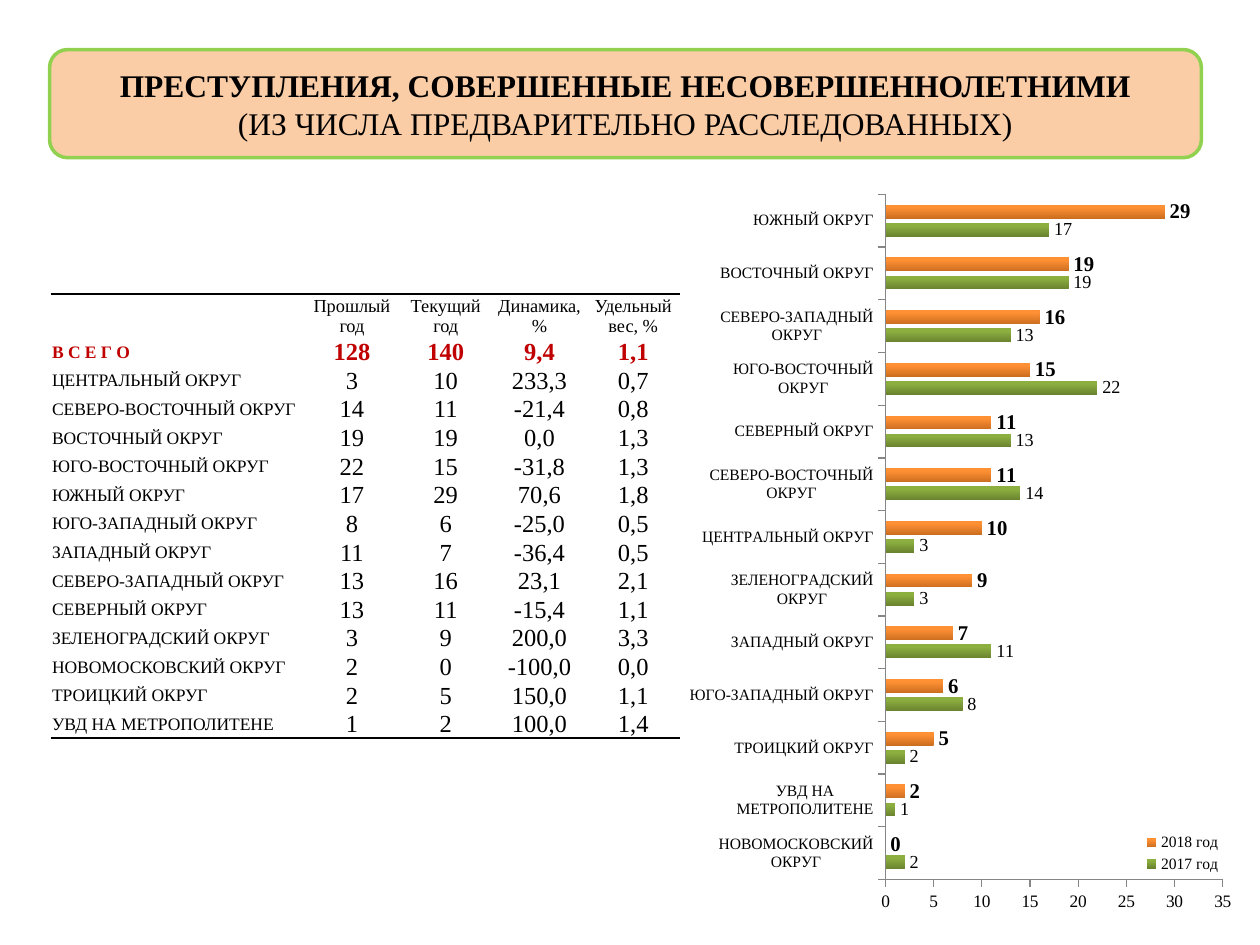
"""Builds a slide on juvenile crime by district: title, table and bar chart."""
import pptx
import pptx.chart.data
import pptx.dml.color
import pptx.enum.chart
import pptx.enum.shapes
import pptx.enum.text
import pptx.oxml.ns
import pptx.util
from lxml import etree

Cm, Pt = pptx.util.Cm, pptx.util.Pt
qn = pptx.oxml.ns.qn
ALIGN = pptx.enum.text.PP_ALIGN
MIDDLE = pptx.enum.text.MSO_ANCHOR.MIDDLE

HEX = {
    "ink": "000000", "paper": "FFFFFF", "total": "C00000", "axis": "868686",
    "peach": "FBCDA7", "lime": "92D050",
    "green": ("6A832F", "8CAF40"), "orange": ("CC6E20", "FF9034"),
}
TITLE = ["ПРЕСТУПЛЕНИЯ, СОВЕРШЕННЫЕ НЕСОВЕРШЕННОЛЕТНИМИ",
         "(ИЗ ЧИСЛА ПРЕДВАРИТЕЛЬНО РАССЛЕДОВАННЫХ)"]
HEAD = ["", "Прошлый год", "Текущий год", "Динамика, %", "Удельный вес, %"]
TOTAL = ["В С Е Г О", "128", "140", "9,4", "1,1"]
ROWS = [
    ["ЦЕНТРАЛЬНЫЙ ОКРУГ", "3", "10", "233,3", "0,7"],
    ["СЕВЕРО-ВОСТОЧНЫЙ ОКРУГ", "14", "11", "-21,4", "0,8"],
    ["ВОСТОЧНЫЙ ОКРУГ", "19", "19", "0,0", "1,3"],
    ["ЮГО-ВОСТОЧНЫЙ ОКРУГ", "22", "15", "-31,8", "1,3"],
    ["ЮЖНЫЙ ОКРУГ", "17", "29", "70,6", "1,8"],
    ["ЮГО-ЗАПАДНЫЙ ОКРУГ", "8", "6", "-25,0", "0,5"],
    ["ЗАПАДНЫЙ ОКРУГ", "11", "7", "-36,4", "0,5"],
    ["СЕВЕРО-ЗАПАДНЫЙ ОКРУГ", "13", "16", "23,1", "2,1"],
    ["СЕВЕРНЫЙ ОКРУГ", "13", "11", "-15,4", "1,1"],
    ["ЗЕЛЕНОГРАДСКИЙ ОКРУГ", "3", "9", "200,0", "3,3"],
    ["НОВОМОСКОВСКИЙ ОКРУГ", "2", "0", "-100,0", "0,0"],
    ["ТРОИЦКИЙ ОКРУГ", "2", "5", "150,0", "1,1"],
    ["УВД НА МЕТРОПОЛИТЕНЕ", "1", "2", "100,0", "1,4"],
]


class Deck:
    """Holds the style and the current slide."""

    face = "Times New Roman"
    plain = "{2D5ABB26-0587-4C30-8999-92F81FD0307C}"

    def __init__(self, slide):
        self.slide = slide

    def tint(self, name):
        return pptx.dml.color.RGBColor.from_string(HEX.get(name, name))

    def style(self, font, size, bold=False, ink="ink"):
        font.name, font.size, font.bold = self.face, Pt(size), bold
        font.color.rgb = self.tint(ink)

    def title(self, box, lines):
        kind = pptx.enum.shapes.MSO_SHAPE.ROUNDED_RECTANGLE
        shape = self.slide.shapes.add_shape(kind, *map(Cm, box))
        shape.shadow.inherit = False
        shape.fill.solid()
        shape.fill.fore_color.rgb = self.tint("peach")
        shape.line.color.rgb = self.tint("lime")
        shape.line.width = Pt(2)
        frame = shape.text_frame
        frame.text = "\n".join(lines)
        frame.word_wrap = True
        frame.vertical_anchor = MIDDLE
        for rank, para in enumerate(frame.paragraphs):
            para.alignment = ALIGN.CENTER
            self.style(para.runs[0].font, 18, rank == 0)

    def border(self, cell, side):
        line = etree.Element(qn(f"a:ln{side}"), w=str(Pt(1.5)))
        fill = etree.SubElement(line, qn("a:solidFill"))
        etree.SubElement(fill, qn("a:srgbClr"), val=HEX["ink"])
        cell._tc.get_or_add_tcPr().insert(0, line)

    def cell(self, cell, text, size, bold, ink, align):
        cell.margin_left = cell.margin_right = cell.margin_top = Cm(0.03)
        cell.margin_bottom = 0
        cell.vertical_anchor = MIDDLE
        cell.fill.solid()
        cell.fill.fore_color.rgb = self.tint("paper")
        para = cell.text_frame.paragraphs[0]
        para.text = text
        para.alignment = align
        self.style(para.font, size, bold, ink)
        for run in para.runs:
            self.style(run.font, size, bold, ink)

    def table(self, spot, wide, high, rows):
        box = [*spot, sum(wide), sum(high)]
        grid = self.slide.shapes.add_table(
            len(rows), len(wide), *map(Cm, box)).table
        grid.first_row = grid.horz_banding = False
        grid._tbl.tblPr.find(qn("a:tableStyleId")).text = self.plain
        for col, width in zip(grid.columns, wide):
            col.width = Cm(width)
        for r, (row, height) in enumerate(zip(rows, high)):
            grid.rows[r].height = Cm(height)
            for c, text in enumerate(row):
                size = 10.5 if r == 0 else 14 if c else 10
                self.cell(grid.cell(r, c), text, size, r == 1,
                          "total" if r == 1 else "ink",
                          ALIGN.CENTER if c else ALIGN.LEFT)
        for c in range(len(wide)):
            self.border(grid.cell(0, c), "T")
            self.border(grid.cell(len(rows) - 1, c), "B")

    def layout(self, part, index, spot, inner=False):
        for old in part.findall(qn("c:layout")):
            part.remove(old)
        node = etree.Element(qn("c:layout"))
        part.insert(index, node)
        node = etree.SubElement(node, qn("c:manualLayout"))
        if inner:
            etree.SubElement(node, qn("c:layoutTarget"), val="inner")
        for key in "xy":
            etree.SubElement(node, qn(f"c:{key}Mode"), val="edge")
        for key, val in zip("xywh", spot):
            etree.SubElement(node, qn(f"c:{key}"), val=str(val))

    def axis(self, axis, size):
        axis.has_major_gridlines = False
        axis.major_tick_mark = pptx.enum.chart.XL_TICK_MARK.OUTSIDE
        axis.format.line.color.rgb = self.tint("axis")
        self.style(axis.tick_labels.font, size)

    def series(self, line, hue, size, bold):
        fill = line.format.fill
        fill.gradient()
        fill.gradient_angle = 90
        for stop, tone, spot in zip(fill.gradient_stops, HEX[hue], (0, 0.8)):
            stop.color.rgb = self.tint(tone)
            stop.position = spot
        tags = line.data_labels
        tags.show_value = True
        tags.position = pptx.enum.chart.XL_LABEL_POSITION.OUTSIDE_END
        self.style(tags.font, size, bold)

    def chart(self, box, names, sets):
        data = pptx.chart.data.CategoryChartData()
        data.categories = names
        for name, vals, *_ in sets:
            data.add_series(name, vals)
        kind = pptx.enum.chart.XL_CHART_TYPE.BAR_CLUSTERED
        chart = self.slide.shapes.add_chart(kind, *map(Cm, box), data).chart
        self.style(chart.font, 10)
        chart.font.name = "Calibri"
        chart.has_title = False
        plot = chart.plots[0]
        plot.vary_by_categories = False
        plot.gap_width, plot.overlap = 150, -31
        for line, (_, _, *look) in zip(plot.series, sets):
            self.series(line, *look)
        self.axis(chart.category_axis, 9)
        self.axis(chart.value_axis, 10)
        chart.value_axis.minimum_scale = 0
        chart.value_axis.maximum_scale = 35
        chart.value_axis.major_unit = 5
        chart.has_legend = True
        key = chart.legend
        key.position = pptx.enum.chart.XL_LEGEND_POSITION.RIGHT
        key.include_in_layout = False
        self.style(key.font, 9)
        self.layout(key._element, 1, (0.84, 0.87, 0.14, 0.06))
        area = chart._chartSpace.chart.plotArea
        self.layout(area, 0, (0.22, 0.03, 0.76, 0.91), True)
        spot = area.find(qn("c:layout"))[0]
        for tag, val in zip("xywh", (0.355, 0.025, 0.63, 0.91)):
            spot.find(qn(f"c:{tag}")).set("val", str(val))


def main():
    show = pptx.Presentation()
    show.slide_width, show.slide_height = Cm(25.4), Cm(19.05)
    deck = Deck(show.slides.add_slide(show.slide_layouts[6]))
    deck.title((1, 1, 23.22, 2.18), TITLE)
    ranked = sorted(ROWS, key=lambda row: int(row[2]))
    past, now = ([int(row[c]) for row in ranked] for c in (1, 2))
    deck.chart((13.9, 3.54, 10.92, 15.18), [row[0] for row in ranked],
               [("2017 год", past, "green", 10.5, False),
                ("2018 год", now, "orange", 12, True)])
    deck.table((1.02, 5.92), [5.13] + [1.89] * 4,
               [0.88] + [0.57] * (len(ROWS) + 1), [HEAD, TOTAL, *ROWS])
    show.save("out.pptx")


if __name__ == "__main__":
    main()
